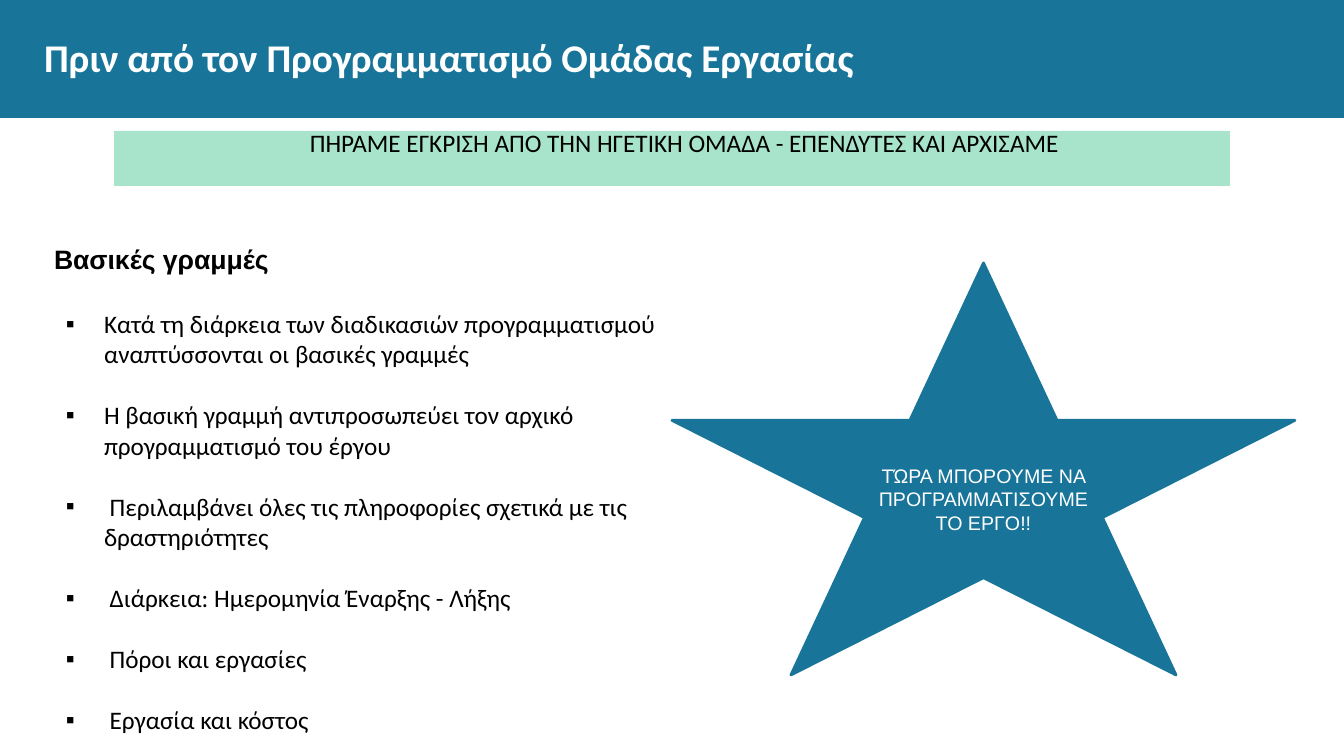
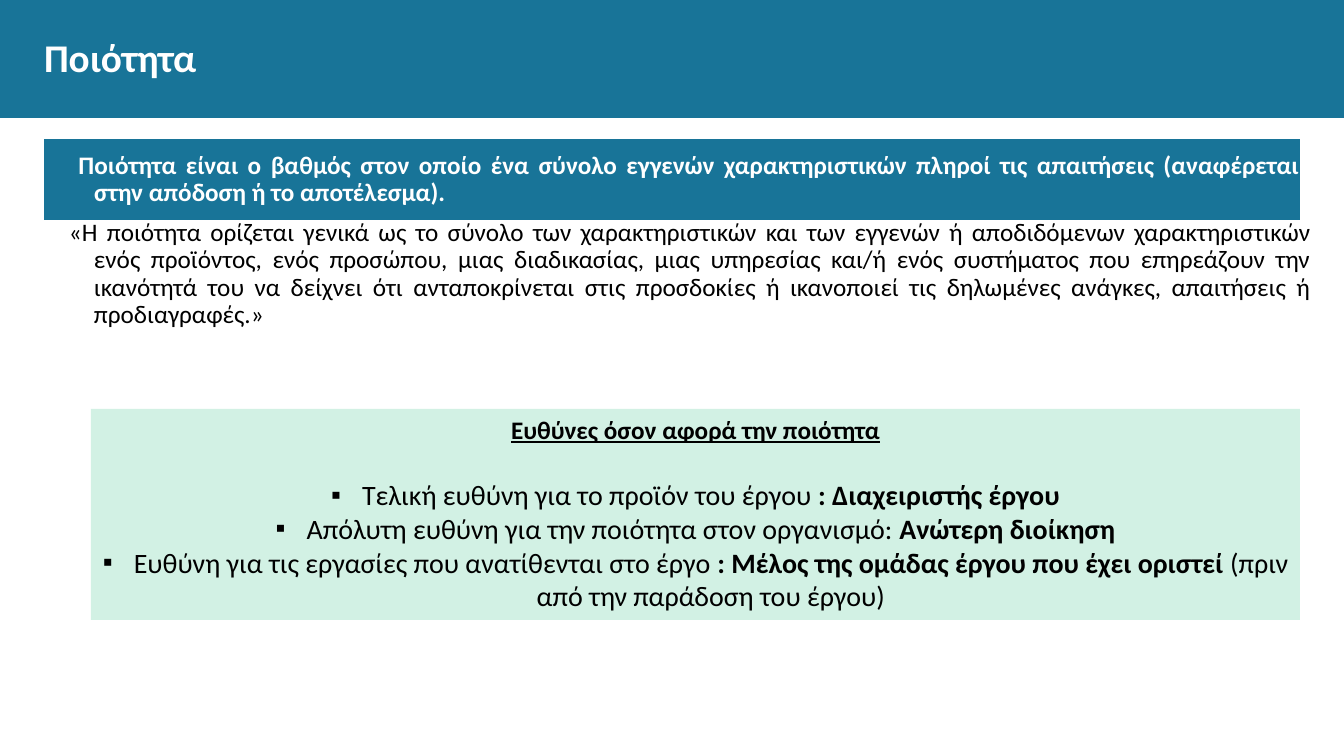
from lxml import etree
from pptx import Presentation
from pptx.dml.color import RGBColor
from pptx.enum.shapes import MSO_SHAPE
from pptx.enum.text import MSO_ANCHOR, PP_ALIGN
from pptx.oxml.ns import qn
from pptx.util import Pt

# Scale: 1344 x 756 px on a 13.33 x 7.5 inch page
EMU_PER_PX = 914400 / 100.8
WIDTH, HEIGHT = 1344, 756

# Colours
BLUE = RGBColor(0x18, 0x74, 0x98)
MINT = RGBColor(0xA7, 0xE4, 0xCB)
PALE_MINT = RGBColor(0xD2, 0xF1, 0xE4)
WHITE = RGBColor(0xFF, 0xFF, 0xFF)
BLACK = RGBColor(0, 0, 0)

# Enum members
RECTANGLE, STAR = MSO_SHAPE.RECTANGLE, MSO_SHAPE.STAR_5_POINT
LEFT, CENTER, JUSTIFY = PP_ALIGN.LEFT, PP_ALIGN.CENTER, PP_ALIGN.JUSTIFY
TOP, MIDDLE = MSO_ANCHOR.TOP, MSO_ANCHOR.MIDDLE

# Text formats
BODY = {"name": "Calibri", "size": Pt(18), "bold": False}
STRONG = BODY | {"bold": True}
TITLE = STRONG | {"size": Pt(28)}
HEADING = {"name": "Arial", "size": Pt(19), "bold": True}
STAR_TEXT = {"name": "Arial", "size": Pt(14), "bold": False}
LARGE = BODY | {"size": Pt(20)}
LARGE_STRONG = LARGE | {"bold": True}

# Paragraph formats and insets
TIGHT = {"line_spacing": 0.9}
HANGING = (50, -25)
NO_INSET, INSET = (0, 0), (10, 5)


def px(length):
    return round(length * EMU_PER_PX)


class Slides:
    """Holds the deck, its shared style and the current slide."""

    def __init__(self):
        self.deck = Presentation()
        self.deck.slide_width, self.deck.slide_height = px(WIDTH), px(HEIGHT)
        self.page = None

    def new_page(self, title):
        self.page = self.deck.slides.add_slide(self.deck.slide_layouts[6])
        self.shape(RECTANGLE, 0, 0, WIDTH, 118, BLUE)
        frame = self.text_box(44, 19, 1256, 75, NO_INSET, MIDDLE)
        self.paragraph(frame, [(title, TITLE)], colour=WHITE)

    def shape(self, kind, left, top, width, height, fill,
              inset=INSET, anchor=TOP, outline=None):
        shape = self.page.shapes.add_shape(
            kind, px(left), px(top), px(width), px(height))
        shape.shadow.inherit = False
        shape.fill.solid()
        shape.fill.fore_color.rgb = fill
        if outline:
            shape.line.color.rgb = fill
            shape.line.width = outline
        else:
            shape.line.fill.background()
        return self.frame(shape, inset, anchor)

    def text_box(self, left, top, width, height, inset=INSET, anchor=TOP):
        box = self.page.shapes.add_textbox(
            px(left), px(top), px(width), px(height))
        return self.frame(box, inset, anchor)

    def frame(self, box, inset, anchor):
        across, down = (px(length) for length in inset)
        settings = {"word_wrap": True, "vertical_anchor": anchor,
                    "margin_left": across, "margin_right": across,
                    "margin_top": down, "margin_bottom": down}
        for name, value in settings.items():
            setattr(box.text_frame, name, value)
        return box.text_frame

    def paragraph(self, frame, spans, align=LEFT, colour=BLACK,
                  indent=None, bullet=False, **spacing):
        first = frame.paragraphs[0]
        para = frame.add_paragraph() if first.runs else first
        for name, value in ({"alignment": align} | spacing).items():
            setattr(para, name, value)
        properties = para._p.get_or_add_pPr()
        if indent:
            properties.set("marL", str(px(indent[0])))
            properties.set("indent", str(px(indent[1])))
        if bullet:
            bullet_colour = etree.SubElement(properties, qn("a:buClr"))
            etree.SubElement(bullet_colour, qn("a:srgbClr"), val=str(colour))
            etree.SubElement(properties, qn("a:buFont"), typeface="Arial")
            etree.SubElement(properties, qn("a:buChar"), char="▪")
        for text, style in spans:
            span = para.add_run()
            span.text = text
            span.font.color.rgb = colour
            for name, value in style.items():
                setattr(span.font, name, value)


def planning_page(slides):
    slides.new_page("Πριν από τον Προγραμματισμό Ομάδας Εργασίας")

    # Approval banner
    banner = slides.shape(RECTANGLE, 114, 131, 1116, 55, MINT, NO_INSET)
    slides.paragraph(
        banner,
        [("ΠΗΡΑΜΕ ΕΓΚΡΙΣΗ ΑΠΟ ΤΗΝ ΗΓΕΤΙΚΗ ΟΜΑΔΑ - ΕΠΕΝΔΥΤΕΣ ΚΑΙ ΑΡΧΙΣΑΜΕ", BODY)],
        CENTER, indent=HANGING, **TIGHT)

    # Star
    star = slides.shape(STAR, 672, 263, 623, 412, BLUE,
                        anchor=MIDDLE, outline=Pt(2))
    slides.paragraph(
        star, [("ΤΏΡΑ ΜΠΟΡΟΥΜΕ ΝΑ ΠΡΟΓΡΑΜΜΑΤΙΣΟΥΜΕ ΤΟ ΕΡΓΟ!!", STAR_TEXT)],
        CENTER, WHITE)

    # Baseline list
    baselines = slides.text_box(44, 238, 638, 504)
    slides.paragraph(baselines, [("Βασικές γραμμές", HEADING)],
                     space_after=Pt(2))
    for text in (
            "Κατά τη διάρκεια των διαδικασιών προγραμματισμού αναπτύσσονται οι βασικές γραμμές",
            "Η βασική γραμμή αντιπροσωπεύει τον αρχικό προγραμματισμό του έργου",
            " Περιλαμβάνει όλες τις πληροφορίες σχετικά με τις δραστηριότητες",
            " Διάρκεια: Ημερομηνία Έναρξης - Λήξης",
            " Πόροι και εργασίες",
            " Εργασία και κόστος"):
        slides.paragraph(baselines, [(text, BODY)], indent=(50, -38),
                         bullet=True, space_before=Pt(22))


def quality_page(slides):
    slides.new_page("Ποιότητα")

    # Definitions
    summary = slides.shape(RECTANGLE, 44, 139, 1256, 81, BLUE, NO_INSET, MIDDLE)
    slides.paragraph(
        summary,
        [(" Ποιότητα είναι ο βαθμός στον οποίο ένα σύνολο εγγενών χαρακτηριστικών "
          "πληροί τις απαιτήσεις (αναφέρεται στην απόδοση ή το αποτέλεσμα).", STRONG)],
        JUSTIFY, WHITE, HANGING, **TIGHT)
    definition = slides.text_box(44, 220, 1267, 127, NO_INSET)
    slides.paragraph(
        definition,
        [("«Η ποιότητα ορίζεται γενικά ως το σύνολο των χαρακτηριστικών και των "
          "εγγενών ή αποδιδόμενων χαρακτηριστικών ενός προϊόντος, ενός προσώπου, "
          "μιας διαδικασίας, μιας υπηρεσίας και/ή ενός συστήματος που επηρεάζουν "
          "την ικανότητά του να δείχνει ότι ανταποκρίνεται στις προσδοκίες ή "
          "ικανοποιεί τις δηλωμένες ανάγκες, απαιτήσεις ή προδιαγραφές.»", BODY)],
        JUSTIFY, indent=HANGING, **TIGHT)

    # Responsibilities
    duties = slides.shape(RECTANGLE, 91, 409, 1209, 211, PALE_MINT)
    slides.paragraph(
        duties,
        [("Ευθύνες όσον αφορά την ποιότητα", STRONG | {"underline": True})],
        CENTER, space_after=Pt(24))
    for duty, owner, remark in (
            ("Τελική ευθύνη για το προϊόν του έργου ", ": Διαχειριστής έργου", ""),
            ("Απόλυτη ευθύνη για την ποιότητα στον οργανισμό: ",
             "Ανώτερη διοίκηση", ""),
            ("Ευθύνη για τις εργασίες που ανατίθενται στο έργο ",
             ": Μέλος της ομάδας έργου που έχει οριστεί ",
             "(πριν από την παράδοση του έργου)")):
        spans = [(duty, LARGE), (owner, LARGE_STRONG)]
        if remark:
            spans.append((remark, LARGE))
        slides.paragraph(duties, spans, CENTER, indent=(31, -31), bullet=True)


def main():
    slides = Slides()
    planning_page(slides)
    quality_page(slides)
    slides.deck.save("out.pptx")


if __name__ == "__main__":
    main()
